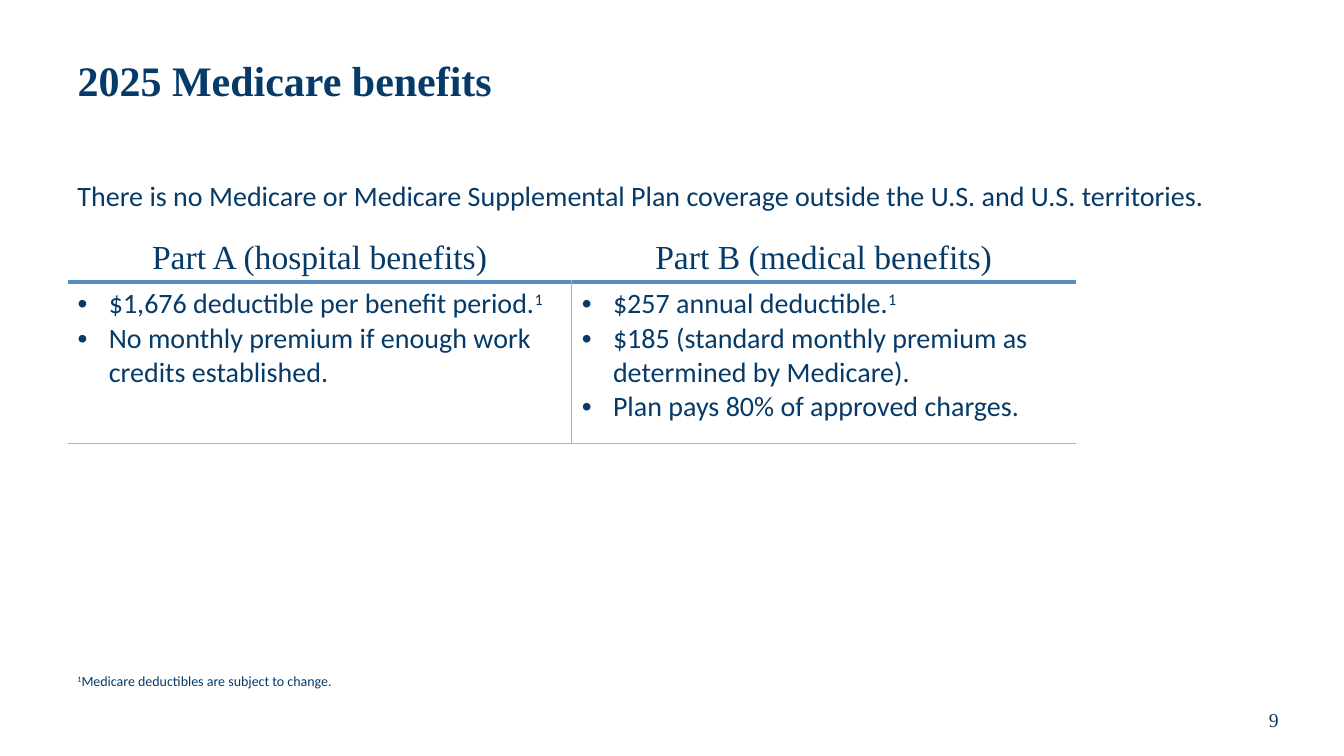
from lxml import etree
from pptx import Presentation
from pptx.dml.color import RGBColor
from pptx.enum.text import MSO_ANCHOR, MSO_AUTO_SIZE, PP_ALIGN
from pptx.oxml.ns import qn
from pptx.util import Inches, Pt

LEFT, CENTER = PP_ALIGN.LEFT, PP_ALIGN.CENTER
TOP, MIDDLE = MSO_ANCHOR.TOP, MSO_ANCHOR.MIDDLE
NO_FIT = MSO_AUTO_SIZE.NONE

COLORS = {"navy": "063A68", "blue": "568EC1", "gray": "B2B2B2"}
SERIF, SANS = "Times New Roman", "Calibri"
WIDTH, HEIGHT = 13.33, 7.5
MARGIN = 0.67
CONTENT_WIDTH = WIDTH - 2 * MARGIN
COLUMN_WIDTH = 5
ROW_HEIGHTS = (0.46, 1.6)
BULLET_INDENT = 0.31
HEADER_RULE = (COLORS["blue"], 3)
THIN_RULE = (COLORS["gray"], 0.5)

# Each benefit is a text and its footnote mark
BENEFITS = {
    "Part A (hospital benefits)": [
        ("$1,676 deductible per benefit period.", "1"),
        ("No monthly premium if enough work credits established.", ""),
    ],
    "Part B (medical benefits)": [
        ("$257 annual deductible.", "1"),
        ("$185 (standard monthly premium as determined by Medicare).", ""),
        ("Plan pays 80% of approved charges.", ""),
    ],
}


def add_span(para, text, size=20, font=SANS, bold=False, raised=False):
    span = para.add_run()
    span.text = text
    span.font.size = Pt(size)
    span.font.name = font
    span.font.bold = bold
    span.font.color.rgb = RGBColor.from_string(COLORS["navy"])
    if raised:
        span.font._element.set("baseline", "30000")


def place(box, left, top, width, height, anchor=TOP):
    box.left, box.top = Inches(left), Inches(top)
    box.width, box.height = Inches(width), Inches(height)
    frame = box.text_frame
    frame.word_wrap = True
    frame.auto_size = NO_FIT
    frame.vertical_anchor = anchor
    return frame.paragraphs[0]


def add_text_box(page, left, top, width, height, anchor=TOP):
    box = page.shapes.add_textbox(0, 0, 0, 0)
    return place(box, left, top, width, height, anchor)


def set_bullet(para):
    indent = Inches(BULLET_INDENT)
    properties = para._p.get_or_add_pPr()
    properties.set("marL", str(indent))
    properties.set("indent", str(-indent))
    etree.SubElement(properties, qn("a:buFont")).set("typeface", "Arial")
    etree.SubElement(properties, qn("a:buChar")).set("char", "•")


def set_borders(cell, rules):
    properties = cell._tc.get_or_add_tcPr()
    for side in "LRTB":
        line = etree.SubElement(properties, qn(f"a:ln{side}"))
        if side in rules:
            color, width = rules[side]
            line.set("w", str(Pt(width)))
            fill = etree.SubElement(line, qn("a:solidFill"))
            etree.SubElement(fill, qn("a:srgbClr")).set("val", color)
        else:
            etree.SubElement(line, qn("a:noFill"))
    cell.fill.background()


def fill_benefits(cell, benefits):
    for index, (text, mark) in enumerate(benefits):
        frame = cell.text_frame
        para = frame.add_paragraph() if index else frame.paragraphs[0]
        set_bullet(para)
        add_span(para, text)
        if mark:
            add_span(para, mark, raised=True)


def add_benefits_table(page):
    count = len(BENEFITS)
    table = page.shapes.add_table(
        len(ROW_HEIGHTS), count, Inches(MARGIN), Inches(2.33),
        Inches(count * COLUMN_WIDTH), Inches(sum(ROW_HEIGHTS))).table
    table.first_row = table.horz_banding = False
    for row, height in zip(table.rows, ROW_HEIGHTS):
        row.height = Inches(height)
    for index, (heading, benefits) in enumerate(BENEFITS.items()):
        header, body = table.cell(0, index), table.cell(1, index)
        header.vertical_anchor = MIDDLE
        para = header.text_frame.paragraphs[0]
        para.alignment = CENTER
        add_span(para, heading, size=24, font=SERIF)
        set_borders(header, {"B": HEADER_RULE})

        fill_benefits(body, benefits)
        rules = {"T": HEADER_RULE, "B": THIN_RULE}
        if index > 0:
            rules["L"] = THIN_RULE
        if index < count - 1:
            rules["R"] = THIN_RULE
        set_borders(body, rules)


def main():
    deck = Presentation()
    deck.slide_width, deck.slide_height = Inches(WIDTH), Inches(HEIGHT)
    page = deck.slides.add_slide(deck.slide_layouts[5])

    # Title
    para = place(page.shapes.title, MARGIN, 0.25, CONTENT_WIDTH, 1.15, MIDDLE)
    para.alignment = LEFT
    para.line_spacing = 0.9
    add_span(para, "2025 Medicare benefits", size=30, font=SERIF, bold=True)

    # Coverage statement
    para = add_text_box(page, MARGIN, 1.76, CONTENT_WIDTH, 0.45)
    para.line_spacing = 0.9
    add_span(para, "There is no Medicare or Medicare Supplemental Plan coverage "
                   "outside the U.S. and U.S. territories.")

    add_benefits_table(page)

    # Footnote
    para = add_text_box(page, MARGIN, 6.62, 9, 0.27)
    add_span(para, "1", size=10, raised=True)
    add_span(para, "Medicare deductibles are subject to change.", size=10)

    # Page number
    para = add_text_box(page, 12.05, 6.89, 1.17, 0.5, MIDDLE)
    para.alignment = CENTER
    add_span(para, "9", size=14, font=SERIF)

    deck.save("out.pptx")


if __name__ == "__main__":
    main()
